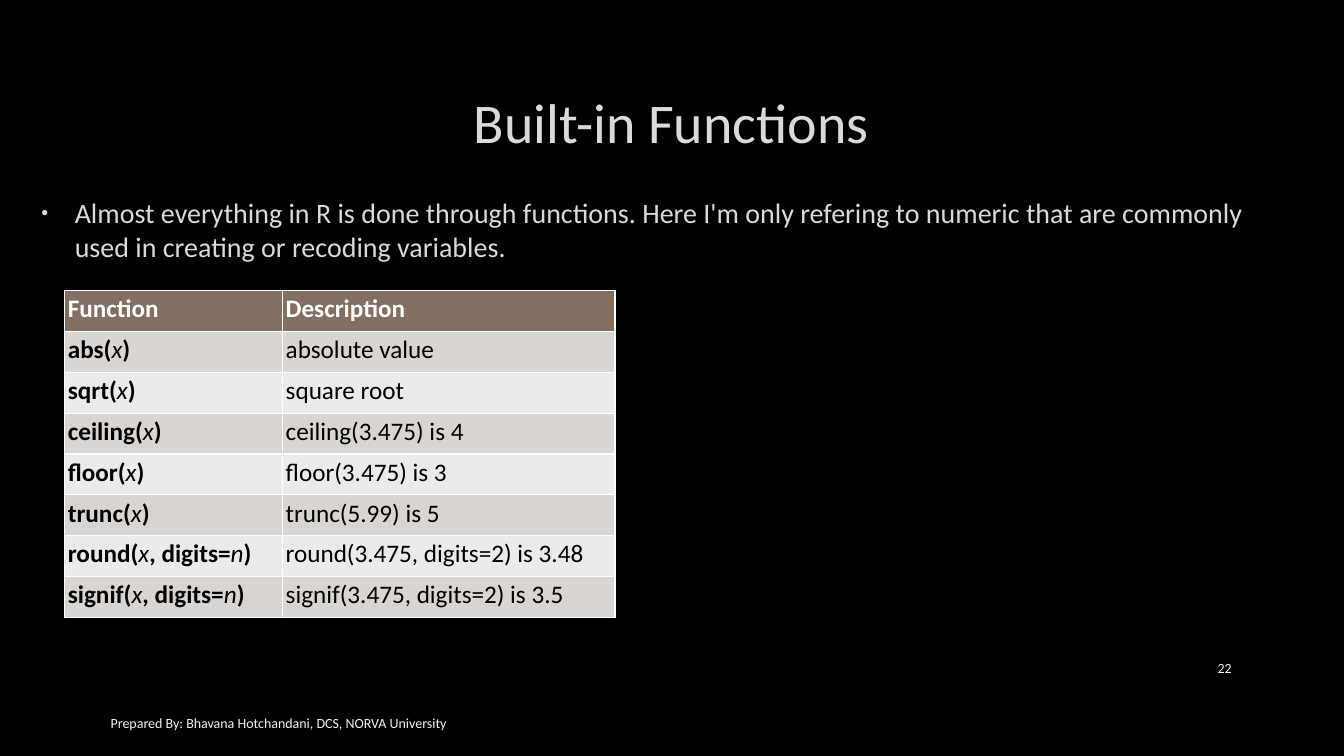
"""Build the slide on built-in numeric functions in R."""
from dataclasses import dataclass

from lxml.etree import SubElement
from pptx import Presentation
from pptx.dml.color import RGBColor
from pptx.enum.text import MSO_ANCHOR, PP_ALIGN
from pptx.oxml.ns import qn
from pptx.util import Cm, Pt

HEADING_COLOUR = "DADADA"
FOOTER_COLOUR = "F2F2F2"
HEADER_FILL = "826F61"
BAND_FILLS = ("D8D5D2", "EDEBEA")


@dataclass(frozen=True)
class Box:
    """Position and size in centimetres."""
    left: float
    top: float
    width: float
    height: float

    def lengths(self) -> tuple:
        """Return the four values as lengths."""
        return Cm(self.left), Cm(self.top), Cm(self.width), Cm(self.height)


@dataclass(frozen=True)
class BuiltIn:
    """A function signature, with arguments between asterisks, and its meaning."""
    signature: str
    description: str


@dataclass(frozen=True)
class FooterItem:
    """A small text at the foot of the slide."""
    text: str
    box: Box
    align: PP_ALIGN


BUILT_INS = (
    BuiltIn("abs(*x*)", "absolute value"),
    BuiltIn("sqrt(*x*)", "square root"),
    BuiltIn("ceiling(*x*)", "ceiling(3.475) is 4"),
    BuiltIn("floor(*x*)", "floor(3.475) is 3"),
    BuiltIn("trunc(*x*)", "trunc(5.99) is 5"),
    BuiltIn("round(*x*, digits=*n*)", "round(3.475, digits=2) is 3.48"),
    BuiltIn("signif(*x*, digits=*n*)", "signif(3.475, digits=2) is 3.5"),
)
FOOTER = (
    FooterItem("Prepared By: Bhavana Hotchandani, DCS, NORVA University",
               Box(2.54, 17.7, 18.54, 1.02), PP_ALIGN.LEFT),
    FooterItem("22", Box(29.21, 16.33, 2.08, 1.02), PP_ALIGN.RIGHT),
)


def rgb(colour: str) -> RGBColor:
    """Turn a hex string into a colour."""
    return RGBColor.from_string(colour)


def write(paragraph, text: str, *, size: float, colour: str, bold: bool = False,
          align: PP_ALIGN = PP_ALIGN.LEFT, outlined: bool = False) -> None:
    """Write text, setting the parts between asterisks in light italics."""
    paragraph.alignment = align
    for index, part in enumerate(text.split("*")):
        is_argument = index % 2 == 1
        run = paragraph.add_run()
        run.text = part
        font = run.font
        font.name, font.size = "Calibri", Pt(size)
        font.bold, font.italic = bold and not is_argument, is_argument
        font.color.rgb = rgb(colour)
        if outlined:
            add_outline(font)


def add_outline(font) -> None:
    """Give letters a thin, almost transparent outline."""
    properties = font._element
    outline = properties.makeelement(qn("a:ln"), {"w": str(Pt(0.75))})
    properties.insert(0, outline)
    fill = SubElement(outline, qn("a:solidFill"))
    tone = SubElement(fill, qn("a:srgbClr"), val="404040")
    SubElement(tone, qn("a:alpha"), val="10000")


def add_bullet(paragraph) -> None:
    """Give the paragraph a small hanging bullet."""
    properties = paragraph._p.get_or_add_pPr()
    properties.set("marL", str(Cm(0.97)))
    properties.set("indent", str(Cm(-0.84)))
    colour = SubElement(properties, qn("a:buClr"))
    SubElement(colour, qn("a:srgbClr"), val=HEADING_COLOUR)
    SubElement(properties, qn("a:buSzPct"), val="70000")
    SubElement(properties, qn("a:buFont"), typeface="Arial")
    SubElement(properties, qn("a:buChar"), char="•")


def place(shape, box: Box) -> None:
    """Move and resize a shape."""
    shape.left, shape.top, shape.width, shape.height = box.lengths()


def add_heading(slide) -> None:
    """Fill the title placeholder."""
    title = slide.shapes.title
    place(title, Box(2.54, 1.7, 28.75, 2.69))
    title.text_frame.vertical_anchor = MSO_ANCHOR.MIDDLE
    write(title.text_frame.paragraphs[0], "Built-in Functions", size=40,
          colour=HEADING_COLOUR, align=PP_ALIGN.CENTER, outlined=True)


def add_introduction(slide) -> None:
    """Fill the body placeholder."""
    introduction = slide.placeholders[1]
    place(introduction, Box(0.66, 4.8, 32.39, 12.9))
    paragraph = introduction.text_frame.paragraphs[0]
    paragraph.space_before, paragraph.space_after = Pt(4), Pt(6)
    add_bullet(paragraph)
    write(paragraph, "Almost everything in R is done through functions. Here I'm only "
          "refering to numeric that are commonly used in creating or recoding variables.",
          size=20, colour=HEADING_COLOUR, outlined=True)


def fill_cell(cell, text: str, *, fill: str, colour: str, bold: bool) -> None:
    """Colour a table cell and write in it."""
    cell.margin_left = cell.margin_right = cell.margin_top = cell.margin_bottom = Cm(0.08)
    cell.fill.solid()
    cell.fill.fore_color.rgb = rgb(fill)
    write(cell.text_frame.paragraphs[0], text, size=18, colour=colour, bold=bold)


def add_function_table(slide) -> None:
    """Add the table of functions and their descriptions."""
    box = Box(1.63, 7.32, 13.87, 8.24)
    table = slide.shapes.add_table(len(BUILT_INS) + 1, 2, *box.lengths()).table
    table.columns[0].width, table.columns[1].width = Cm(5.49), Cm(8.38)
    for column, label in enumerate(("Function", "Description")):
        fill_cell(table.cell(0, column), label, fill=HEADER_FILL, colour="FFFFFF", bold=True)
    for row, built_in in enumerate(BUILT_INS, start=1):
        band = BAND_FILLS[(row - 1) % 2]
        fill_cell(table.cell(row, 0), built_in.signature, fill=band, colour="000000", bold=True)
        fill_cell(table.cell(row, 1), built_in.description, fill=band, colour="000000", bold=False)


def add_footer_item(slide, item: FooterItem) -> None:
    """Add one small text at the foot of the slide."""
    frame = slide.shapes.add_textbox(*item.box.lengths()).text_frame
    frame.word_wrap = True
    frame.vertical_anchor = MSO_ANCHOR.MIDDLE
    write(frame.paragraphs[0], item.text, size=10, colour=FOOTER_COLOUR, align=item.align)


def main() -> None:
    """Build and save the slide."""
    presentation = Presentation()
    presentation.slide_width, presentation.slide_height = Cm(33.87), Cm(19.05)
    slide = presentation.slides.add_slide(presentation.slide_layouts[1])
    slide.background.fill.solid()
    slide.background.fill.fore_color.rgb = rgb("000000")
    add_heading(slide)
    add_introduction(slide)
    for item in FOOTER:
        add_footer_item(slide, item)
    add_function_table(slide)
    presentation.save("out.pptx")


if __name__ == "__main__":
    main()
